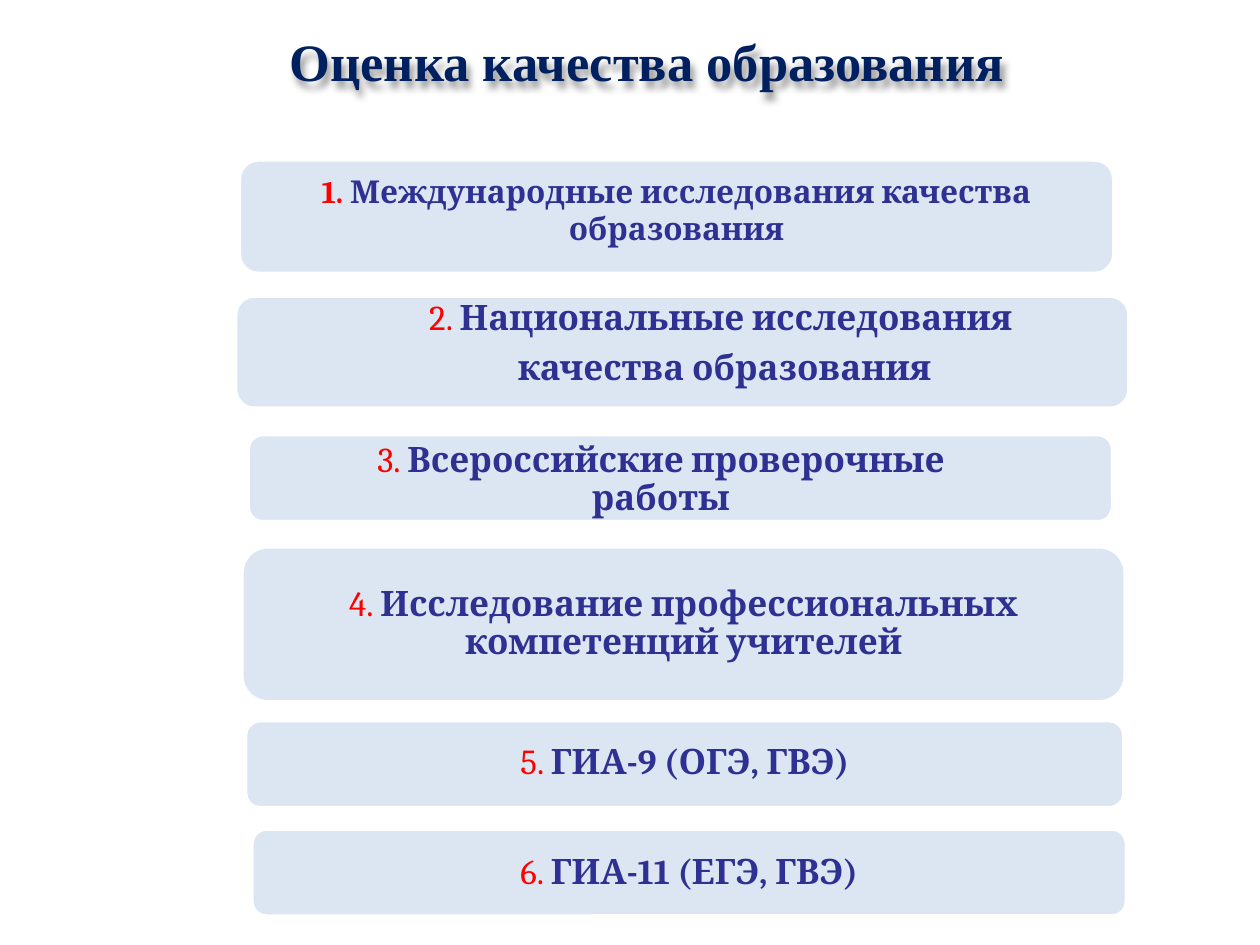
"""Build a slide that lists six ways to assess the quality of education."""
from lxml.etree import SubElement
from pptx import Presentation
from pptx.dml.color import RGBColor
from pptx.enum.shapes import MSO_SHAPE as Shape
from pptx.enum.text import MSO_ANCHOR as Anchor, PP_ALIGN as Align
from pptx.oxml.ns import qn
from pptx.util import Inches, Pt

COLORS = {"title": "002060", "card": "DCE6F2", "edge": "FFFFFF",
          "num": "FF0000", "text": "2E3192", "shade": "000000"}

CARDS = [
    ((1.87, 2.35, 7.09, 0.89), (1.71, 2.28, 8.02, 0.9),
     "2. ", ["Национальные исследования", " качества образования"]),
    ((1.97, 3.45, 6.86, 0.69), (2.35, 3.5, 5.79, 0.62),
     "3. ", ["Всероссийские проверочные работы"]),
    ((1.92, 4.34, 7.01, 1.23), (1.95, 4.4, 6.95, 1.11),
     "4. ", ["Исследование профессиональных компетенций учителей"]),
    ((1.95, 5.72, 6.97, 0.69), (1.98, 5.75, 6.91, 0.62),
     "5. ", ["ГИА-9 (ОГЭ, ГВЭ)"]),
    ((2, 6.58, 6.94, 0.69), (2.03, 6.62, 6.88, 0.62),
     "6. ", ["ГИА-11 (ЕГЭ, ГВЭ)"]),
]


def color(name):
    """Return a named colour."""
    return RGBColor.from_string(COLORS[name])


def set_all(item, values):
    """Set each named attribute of an item."""
    for name, value in values.items():
        setattr(item, name, value)


def add_run(para, text, hue, size, bold=True, face="Cambria"):
    """Add a run of styled text."""
    run = para.add_run()
    run.text = text
    set_all(run.font, {"name": face, "size": Pt(size), "bold": bold})
    run.font.color.rgb = color(hue)


def add_box(slide, place):
    """Add a wrapping text box."""
    box = slide.shapes.add_textbox(*map(Inches, place))
    box.text_frame.word_wrap = True
    return box


def add_shade(box):
    """Cast a soft shadow below the text of a box."""
    effects = SubElement(box.element.spPr, qn("a:effectLst"))
    shade = SubElement(effects, qn("a:outerShdw"), blurRad="50800",
                       dist="50800", dir="4200000", algn="tl", rotWithShape="0")
    tint = SubElement(shade, qn("a:srgbClr"), val=COLORS["shade"])
    SubElement(tint, qn("a:alpha"), val="40000")


def add_title(slide, text):
    """Add the slide heading."""
    box = add_box(slide, (0.39, 0.18, 9.49, 0.61))
    para = box.text_frame.paragraphs[0]
    para.alignment = Align.CENTER
    add_run(para, text, "title", 30, face="Times New Roman")
    add_shade(box)


def add_card(slide, place):
    """Add a rounded card."""
    card = slide.shapes.add_shape(Shape.ROUNDED_RECTANGLE, *map(Inches, place))
    card.shadow.inherit = False
    card.fill.solid()
    card.fill.fore_color.rgb = color("card")
    card.line.color.rgb = color("edge")
    card.line.width = Pt(2)
    return card


def add_first(slide, num, text):
    """Add the first card, which holds its own text at the top."""
    frame = add_card(slide, (1.9, 1.27, 6.94, 0.9)).text_frame
    set_all(frame, {"word_wrap": True, "vertical_anchor": Anchor.TOP})
    para = frame.paragraphs[0]
    para.alignment = Align.CENTER
    add_run(para, num, "num", 18)
    add_run(para, text, "text", 18)


def add_label(slide, place, num, lines):
    """Add a numbered label with one paragraph for each line."""
    frame = add_box(slide, place).text_frame
    set_all(frame, {"vertical_anchor": Anchor.MIDDLE,
                    "margin_left": Inches(0.22), "margin_right": Inches(0.22),
                    "margin_top": 0, "margin_bottom": 0})
    for i, line in enumerate(lines):
        para = frame.add_paragraph() if i else frame.paragraphs[0]
        set_all(para, {"alignment": Align.CENTER, "line_spacing": 0.9,
                       "space_after": Pt(7)})
        if i == 0:
            add_run(para, num, "num", 20, bold=False)
        add_run(para, line, "text", 20)


def main():
    """Build and save the slide."""
    deck = Presentation()
    set_all(deck, {"slide_width": Inches(10), "slide_height": Inches(7.5)})
    slide = deck.slides.add_slide(deck.slide_layouts[6])
    add_title(slide, "Оценка качества образования")
    add_first(slide, "1. ", "Международные исследования качества образования")
    for place, inner, num, lines in CARDS:
        add_card(slide, place)
        add_label(slide, inner, num, lines)
    deck.save("out.pptx")


if __name__ == "__main__":
    main()
